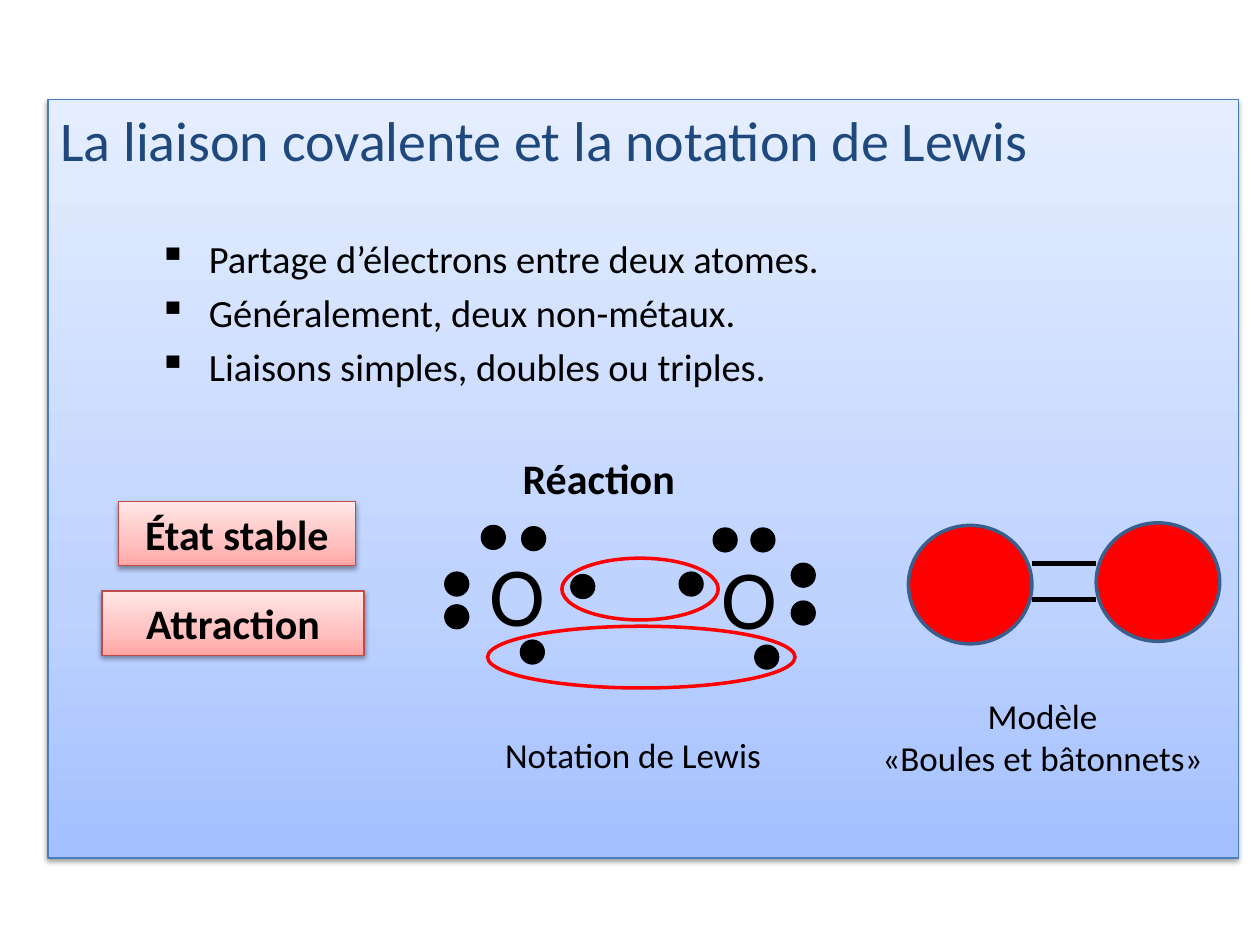
import pptx
import pptx.util
import pptx.dml.color
import pptx.enum.shapes
import pptx.enum.text
import pptx.oxml
import pptx.oxml.ns
import lxml.etree

Inches, Pt = pptx.util.Inches, pptx.util.Pt
SHAPE = pptx.enum.shapes.MSO_SHAPE
ALIGN = pptx.enum.text.PP_ALIGN
NS = pptx.oxml.ns.nsdecls("a")
BLACK, RED = "000000", "FF0000"


def add_shape(kind, box, fill, line, width):
    """Add a preset shape; fill is a hex string, a list of gradient stops or None."""
    sp = s.shapes.add_shape(kind, *[Inches(v) for v in box])
    sp.shadow.inherit = False
    sp.line.color.rgb = pptx.dml.color.RGBColor.from_string(line)
    sp.line.width = Pt(width)
    if fill is None:
        sp.fill.background()
    elif isinstance(fill, str):
        sp.fill.solid()
        sp.fill.fore_color.rgb = pptx.dml.color.RGBColor.from_string(fill)
    else:
        # Gradient running upwards, with a soft shadow below
        stops = "".join(f'<a:gs pos="{pos}000"><a:srgbClr val="{c}"/></a:gs>'
                        for pos, c in zip((0, 35, 100), fill))
        sp._element.spPr.find(pptx.oxml.ns.qn("a:prstGeom")).addnext(pptx.oxml.parse_xml(
            f'<a:gradFill {NS} rotWithShape="1"><a:gsLst>{stops}</a:gsLst>'
            '<a:lin ang="16200000" scaled="0"/></a:gradFill>'))
        sp._element.spPr.find(pptx.oxml.ns.qn("a:effectLst")).append(pptx.oxml.parse_xml(
            f'<a:outerShdw {NS} blurRad="{Pt(3.1)}" dist="{Pt(1.6)}" dir="5400000" rotWithShape="0">'
            '<a:srgbClr val="000000"><a:alpha val="38000"/></a:srgbClr></a:outerShdw>'))
    return sp


def write(p, text, size, color=BLACK, bold=False, align=ALIGN.LEFT):
    """Fill a paragraph with one formatted run."""
    p.alignment = align
    r = p.add_run()
    r.text = text
    for name, value in {"name": "Calibri", "size": Pt(size), "bold": bold}.items():
        setattr(r.font, name, value)
    r.font.color.rgb = pptx.dml.color.RGBColor.from_string(color)


prs = pptx.Presentation()
prs.slide_width, prs.slide_height = Inches(10), Inches(7.5)
s = prs.slides.add_slide(prs.slide_layouts[6])

# Panel with title and bullets
sp = add_shape(SHAPE.RECTANGLE, (0.38, 0.79, 9.45, 6.02), ["A3C0FF", "BFD3FF", "E5EEFF"], "4A7EBB", 0.75)
tf = sp.text_frame
tf.word_wrap = True
tf.vertical_anchor = pptx.enum.text.MSO_ANCHOR.TOP
write(tf.paragraphs[0], "La liaison covalente et la notation de Lewis", 32, "1F497D")
bullets = ["Partage d’électrons entre deux atomes.",
           "Généralement, deux non-métaux.",
           "Liaisons simples, doubles ou triples."]
for i, text in enumerate(bullets):
    p = tf.add_paragraph()
    p.space_before = Pt(4.4 if i else 35.5)
    pPr = p._p.get_or_add_pPr()
    pPr.set("marL", str(Inches(1.18)))
    pPr.set("indent", str(Inches(-0.4)))
    lxml.etree.SubElement(pPr, pptx.oxml.ns.qn("a:buChar")).set("char", "▪")
    write(p, text, 22, align=ALIGN.JUSTIFY)

# Red tags
for text, box in [("État stable", (0.94, 3.98, 1.88, 0.51)),
                  ("Attraction", (0.81, 4.69, 2.08, 0.51))]:
    sp = add_shape(SHAPE.RECTANGLE, box, ["FFA6A5", "FFC0BF", "FFE7E7"], "BF4C48", 0.75)
    write(sp.text_frame.paragraphs[0], text, 24, bold=True, align=ALIGN.CENTER)

# Heading, atom symbols and captions
for lines, box, size, bold, align in [
        (["Réaction"], (4.05, 3.54, 1.48, 0.51), 24, True, ALIGN.LEFT),
        (["O"], (3.79, 4.26, 0.98, 0.94), 48, False, ALIGN.LEFT),
        (["O"], (5.63, 4.28, 0.98, 0.94), 48, False, ALIGN.LEFT),
        (["Notation de Lewis"], (3.91, 5.77, 2.25, 0.44), 20, False, ALIGN.LEFT),
        (["Modèle", "«Boules et bâtonnets»"], (6.89, 5.46, 2.77, 0.77), 20, False, ALIGN.CENTER)]:
    tf = s.shapes.add_textbox(*[Inches(v) for v in box]).text_frame
    tf.word_wrap = len(lines[0]) == 1
    for i, text in enumerate(lines):
        write(tf.add_paragraph() if i else tf.paragraphs[0], text, size, bold=bold, align=align)

# Valence electrons, six for each atom
left_atom = [(3.82, 4.17), (4.14, 4.18), (3.53, 4.54), (3.53, 4.8), (4.53, 4.56), (4.13, 5.08)]
right_atom = [(5.66, 4.19), (5.96, 4.19), (6.28, 4.47), (6.28, 4.77), (5.39, 4.54), (5.99, 5.12)]
for x, y in left_atom + right_atom:
    add_shape(SHAPE.OVAL, (x, y, 0.19, 0.19), BLACK, BLACK, 0.75)

# Shared pairs
for box in [(4.46, 4.43, 1.24, 0.49), (3.87, 4.97, 2.44, 0.49)]:
    add_shape(SHAPE.OVAL, box, None, RED, 2)

# Ball-and-stick model
for x, y in [(7.21, 4.17), (8.7, 4.15)]:
    add_shape(SHAPE.FLOWCHART_CONNECTOR, (x, y, 0.98, 0.94), RED, "3A5F8C", 2)
for y in (4.47, 4.76):
    bond = s.shapes.add_connector(pptx.enum.shapes.MSO_CONNECTOR.STRAIGHT,
                                  Inches(8.19), Inches(y), Inches(8.7), Inches(y))
    bond.line.color.rgb = pptx.dml.color.RGBColor.from_string(BLACK)
    bond.line.width = Pt(3)
    lxml.etree.SubElement(bond._element.spPr, pptx.oxml.ns.qn("a:effectLst"))

prs.save("out.pptx")
